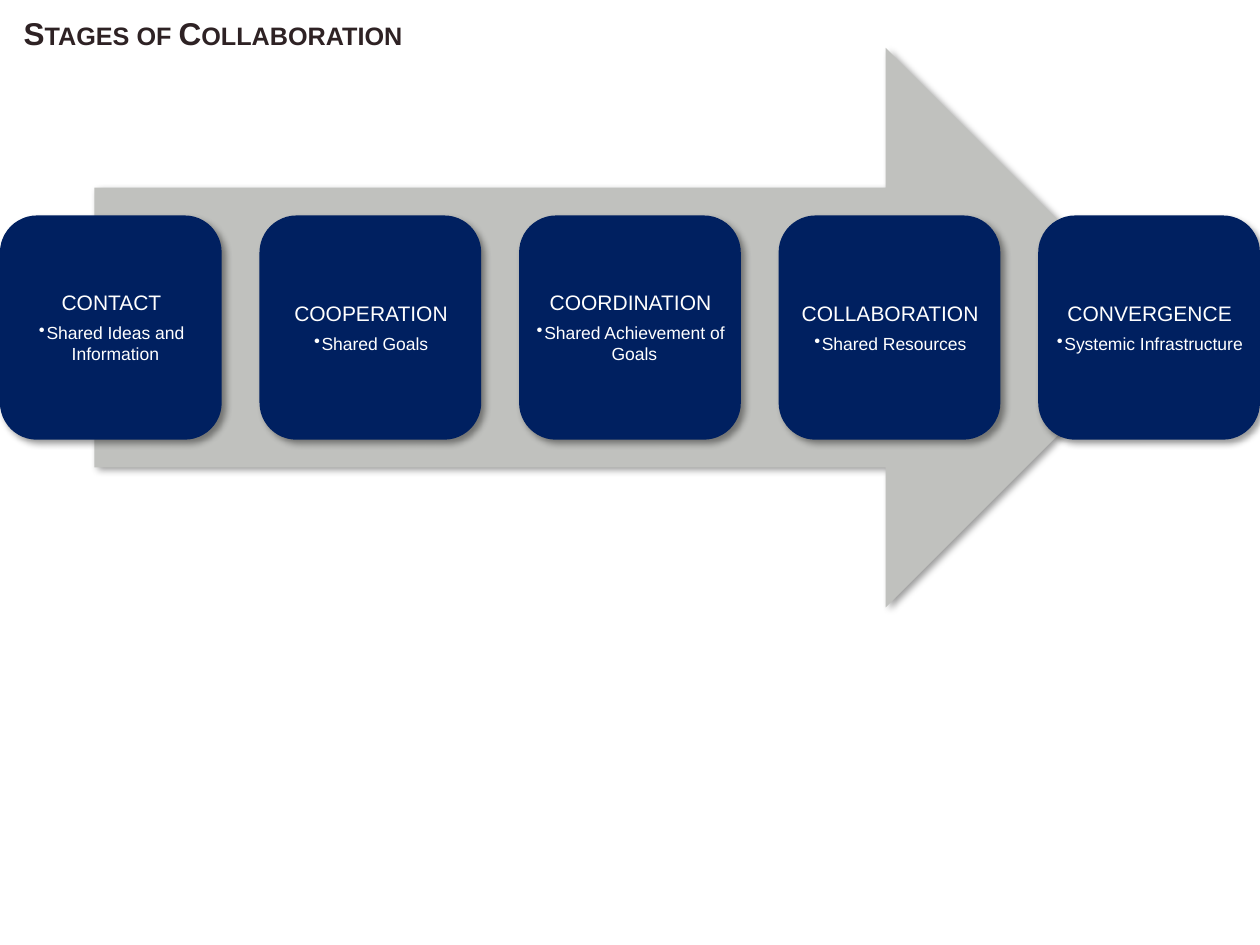
import pptx
import pptx.dml.color
import pptx.enum.shapes
import pptx.enum.text
import pptx.oxml.ns
import pptx.util
from lxml import etree

Inches = pptx.util.Inches
Pt = pptx.util.Pt
Kind = pptx.enum.shapes.MSO_SHAPE
qn = pptx.oxml.ns.qn

STAGES = [
    ("CONTACT", "Shared Ideas and Information"),
    ("COOPERATION", "Shared Goals"),
    ("COORDINATION", "Shared Achievement of Goals"),
    ("COLLABORATION", "Shared Resources"),
    ("CONVERGENCE", "Systemic Infrastructure"),
]


def tint(code):
    return pptx.dml.color.RGBColor.from_string(code)


def add(node, tag, **attrs):
    return etree.SubElement(node, qn(tag), attrs)


class Deck:
    """Holds the style and the current slide."""

    font = "Arial"
    navy = "002060"
    gray = "C0C1BE"
    white = "FFFFFF"
    dark = "2E2224"

    def __init__(self, slide):
        self.slide = slide

    def shape(self, kind, box, fill):
        form = self.slide.shapes.add_shape(kind, *map(Inches, box))
        form.fill.solid()
        form.fill.fore_color.rgb = tint(fill)
        form.line.fill.background()
        form.shadow.inherit = False
        glow = add(form._element.spPr.find(qn("a:effectLst")), "a:outerShdw",
                   blurRad=str(Pt(4)), dist=str(Pt(3)), dir="2700000",
                   algn="tl", rotWithShape="0")
        add(add(glow, "a:srgbClr", val="000000"), "a:alpha", val="40000")

    def frame(self, box, wrap=True):
        text = self.slide.shapes.add_textbox(*map(Inches, box)).text_frame
        text.word_wrap = wrap
        return text

    def run(self, para, words, size, color):
        run = para.add_run()
        run.text = words
        run.font.name = self.font
        run.font.size = Pt(size)
        run.font.color.rgb = tint(color)
        return run

    def line(self, para, words, size, after):
        para.alignment = pptx.enum.text.PP_ALIGN.CENTER
        props = para._p.get_or_add_pPr()
        add(add(props, "a:spcAft"), "a:spcPct", val=str(after * 1000))
        self.run(para, words, size, self.white)
        return props

    def stage(self, left, name, point):
        self.shape(Kind.ROUNDED_RECTANGLE, (left, 1.71, 1.76, 1.78), self.navy)
        text = self.frame((left + 0.09, 1.79, 1.59, 1.61))
        text.vertical_anchor = pptx.enum.text.MSO_ANCHOR.MIDDLE
        text.margin_left = text.margin_right = Inches(0.05)
        text.margin_top = text.margin_bottom = Inches(0.05)
        self.line(text.paragraphs[0], name, 12, 35)
        para = text.add_paragraph()
        para.level = 1
        props = self.line(para, point, 10, 15)
        props.set("marL", str(Inches(0.06)))
        props.set("indent", str(Inches(-0.06)))
        add(props, "a:buChar", char="•")

    def title(self, words):
        text = self.frame((0.09, 0.06, 3.27, 0.4), wrap=False)
        text.auto_size = pptx.enum.text.MSO_AUTO_SIZE.SHAPE_TO_FIT_TEXT
        run = self.run(text.paragraphs[0], words, 18, self.dark)
        run.font.bold = True
        run._r.get_or_add_rPr().set("cap", "small")


def main():
    show = pptx.Presentation()
    show.slide_width = Inches(10)
    show.slide_height = Inches(7.5)
    deck = Deck(show.slides.add_slide(show.slide_layouts[6]))
    deck.shape(Kind.RIGHT_ARROW, (0.75, 0.38, 8.5, 4.44), deck.gray)
    for i, (name, point) in enumerate(STAGES):
        deck.stage(2.06 * i, name, point)
    deck.title("Stages of Collaboration")
    show.save("out.pptx")


if __name__ == "__main__":
    main()
